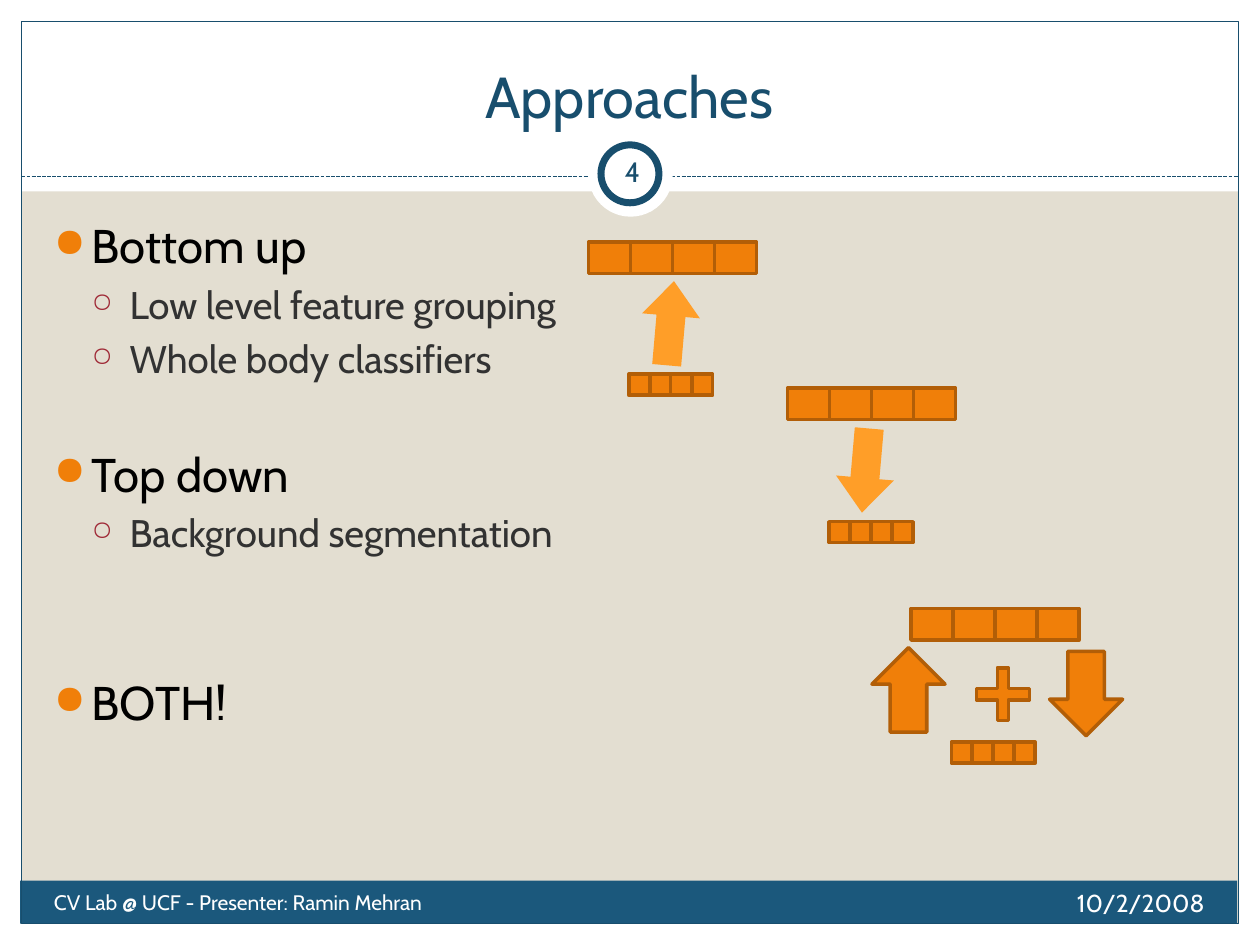
import pptx
import pptx.util
import pptx.dml.color
import pptx.enum.dml
import pptx.enum.shapes
import pptx.enum.text
import pptx.oxml
import lxml.etree

Inches = pptx.util.Inches
Pt = pptx.util.Pt
RGBColor = pptx.dml.color.RGBColor
KIND = pptx.enum.shapes.MSO_SHAPE
ALIGN = pptx.enum.text.PP_ALIGN
ANCHOR = pptx.enum.text.MSO_ANCHOR

SAND = RGBColor(0xE3, 0xDE, 0xD1)
WHITE = RGBColor(0xFF, 0xFF, 0xFF)
BLACK = RGBColor(0, 0, 0)
GREY = RGBColor(0x32, 0x32, 0x32)
BLUE = RGBColor(0x1B, 0x58, 0x7C)
NAVY = RGBColor(0x18, 0x4E, 0x6D)
ORANGE = RGBColor(0xF0, 0x7F, 0x09)
BROWN = RGBColor(0xB2, 0x5E, 0x07)
LIGHT = RGBColor(0xFF, 0x9E, 0x28)
RED = RGBColor(0x9F, 0x29, 0x36)
FONT = "Cabin"


def add_shape(home, kind, box, fill=None, line=None, width=2):
    shape = home.add_shape(kind, *[Inches(n) for n in box])
    shape.shadow.inherit = False
    if fill is None:
        shape.fill.background()
    else:
        shape.fill.solid()
        shape.fill.fore_color.rgb = fill
    if line is None:
        shape.line.fill.background()
    else:
        shape.line.color.rgb = line
        shape.line.width = Pt(width)
    return shape


def add_text(box, text, size, color, align, anchor=ANCHOR.TOP):
    frame = slide.shapes.add_textbox(*[Inches(n) for n in box]).text_frame
    frame.word_wrap = True
    frame.vertical_anchor = anchor
    para = frame.paragraphs[0]
    para.text = text
    para.alignment = align
    para.font.name = FONT
    para.font.size = Pt(size)
    para.font.color.rgb = color
    return frame


deck = pptx.Presentation()
deck.slide_width = Inches(10)
deck.slide_height = Inches(7.5)
slide = deck.slides.add_slide(deck.slide_layouts[6])
slide.background.fill.solid()
slide.background.fill.fore_color.rgb = SAND

# Margins, footer bar and frame
for box in [(0, 7.33, 10, 0.17), (0, 0, 10, 1.52),
            (0, 0, 0.17, 7.5), (9.83, 0, 0.17, 7.5)]:
    add_shape(slide.shapes, KIND.RECTANGLE, box, WHITE)
add_shape(slide.shapes, KIND.RECTANGLE, (0.16, 6.99, 9.66, 0.34), BLUE)
add_shape(slide.shapes, KIND.RECTANGLE, (0.17, 0.17, 9.66, 7.16), None, NAVY, 0.75)

# Dashed rule with the page number in a ring
rule = slide.shapes.add_connector(
    pptx.enum.shapes.MSO_CONNECTOR.STRAIGHT,
    Inches(0.17), Inches(1.4), Inches(9.83), Inches(1.4))
rule.line.color.rgb = NAVY
rule.line.width = Pt(0.75)
rule.line.dash_style = pptx.enum.dml.MSO_LINE.SQUARE_DOT
lxml.etree.SubElement(rule._element.spPr, pptx.oxml.ns.qn("a:effectLst"))
add_shape(slide.shapes, KIND.OVAL, (4.67, 1.05, 0.67, 0.67), WHITE)
add_shape(slide.shapes, KIND.OVAL, (4.77, 1.15, 0.46, 0.46), WHITE, NAVY, 4)

# Title, footer and page number
add_text((0.33, 0.25, 9.33, 0.83), "Approaches", 33, NAVY, ALIGN.CENTER, ANCHOR.BOTTOM)
add_text((6.33, 7, 3.33, 0.4), "10/2/2008", 14, WHITE, ALIGN.RIGHT)
add_text((0.33, 7.01, 3.92, 0.4), "CV Lab @ UCF - Presenter: Ramin Mehran",
         12, WHITE, ALIGN.LEFT)
page = add_text((4.77, 1.12, 0.5, 0.48), "4", 16, NAVY, ALIGN.CENTER, ANCHOR.MIDDLE)
page.margin_left = page.margin_right = Inches(0.05)

# Bullets: text, level, space before in points
items = [
    ("Bottom up", 0, 5.4),
    ("Low level feature grouping", 1, 4.4),
    ("Whole body classifiers", 1, 4.4),
    ("Top down", 0, 36.4),
    ("Background segmentation", 1, 4.4),
    ("BOTH!", 0, 67.4),
]
# For each level: size, colour, bullet, bullet colour, bullet size in percent
styles = [(27, BLACK, "●", ORANGE, 85), (22, GREY, "○", RED, 70)]
body = add_text((0.33, 1.67, 9.3, 5), "", 27, BLACK, ALIGN.LEFT)
for i, (text, level, gap) in enumerate(items):
    size, color, mark, tint, scale = styles[level]
    para = body.paragraphs[0] if i == 0 else body.add_paragraph()
    para.text = text
    para.level = level
    para.space_before = Pt(gap)
    para.font.name = FONT
    para.font.size = Pt(size)
    para.font.color.rgb = color
    props = para._p.get_or_add_pPr()
    props.set("marL", str(Inches(0.3 * (level + 1))))
    props.set("indent", str(Inches(-0.3)))
    bullet = pptx.oxml.parse_xml(
        f'<a:b {pptx.oxml.ns.nsdecls("a")}>'
        f'<a:buClr><a:srgbClr val="{tint}"/></a:buClr>'
        f'<a:buSzPct val="{scale * 1000}"/><a:buChar char="{mark}"/></a:b>')
    spot = props.index(props.find(pptx.oxml.ns.qn("a:spcBef"))) + 1
    props[spot:spot] = list(bullet)

# Diagrams: corner of the large row, corner of the small row,
# arrows as (box, turn, fill, line, head length)
diagrams = [
    ((4.67, 1.92), (4.99, 2.97),
     [((5.09, 2.23, 0.46, 0.67), 185, LIGHT, None, 0.6)]),
    ((6.25, 3.08), (6.58, 4.14),
     [((6.64, 3.4, 0.46, 0.67), 5, LIGHT, None, 0.6)]),
    ((7.23, 4.83), (7.55, 5.89),
     [((6.92, 5.14, 0.58, 0.67), 180, ORANGE, BROWN, 0.5),
      ((8.33, 5.17, 0.58, 0.67), 0, ORANGE, BROWN, 0.5)]),
]
for large, small, arrows in diagrams:
    group = slide.shapes.add_group_shape().shapes
    for box, turn, fill, line, head in arrows:
        arrow = add_shape(group, KIND.DOWN_ARROW, box, fill, line)
        arrow.rotation = turn
        arrow.adjustments[1] = head
    if len(arrows) == 2:
        plus = add_shape(group, KIND.CROSS, (7.75, 5.3, 0.42, 0.42), ORANGE, BROWN)
        plus.adjustments[0] = 0.395
    for (left, top), wide, high in [(small, 1 / 6, 1 / 6), (large, 1 / 3, 1 / 4)]:
        for i in reversed(range(4)):
            add_shape(group, KIND.RECTANGLE, (left + i * wide, top, wide, high),
                      ORANGE, BROWN)

deck.save("out.pptx")
